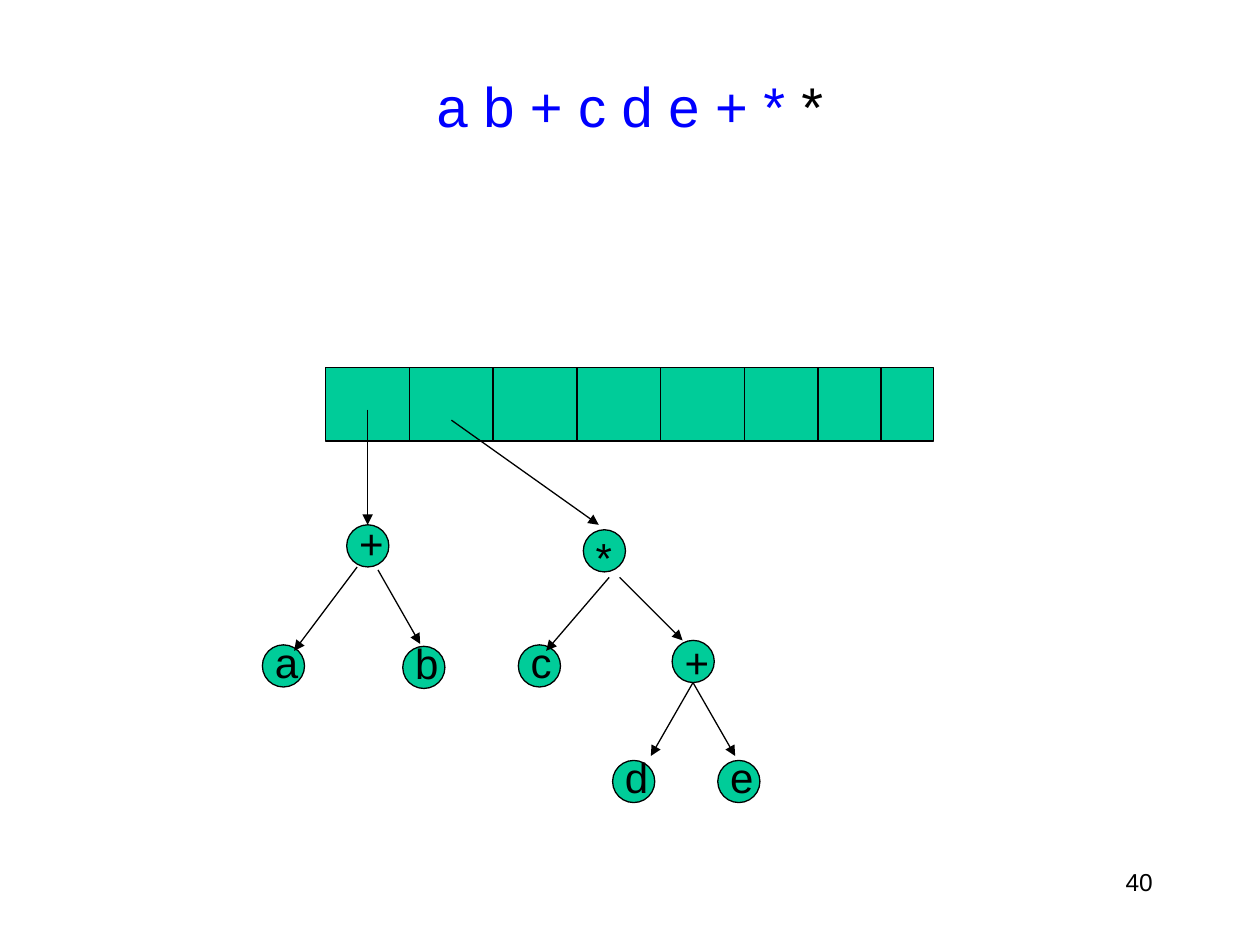
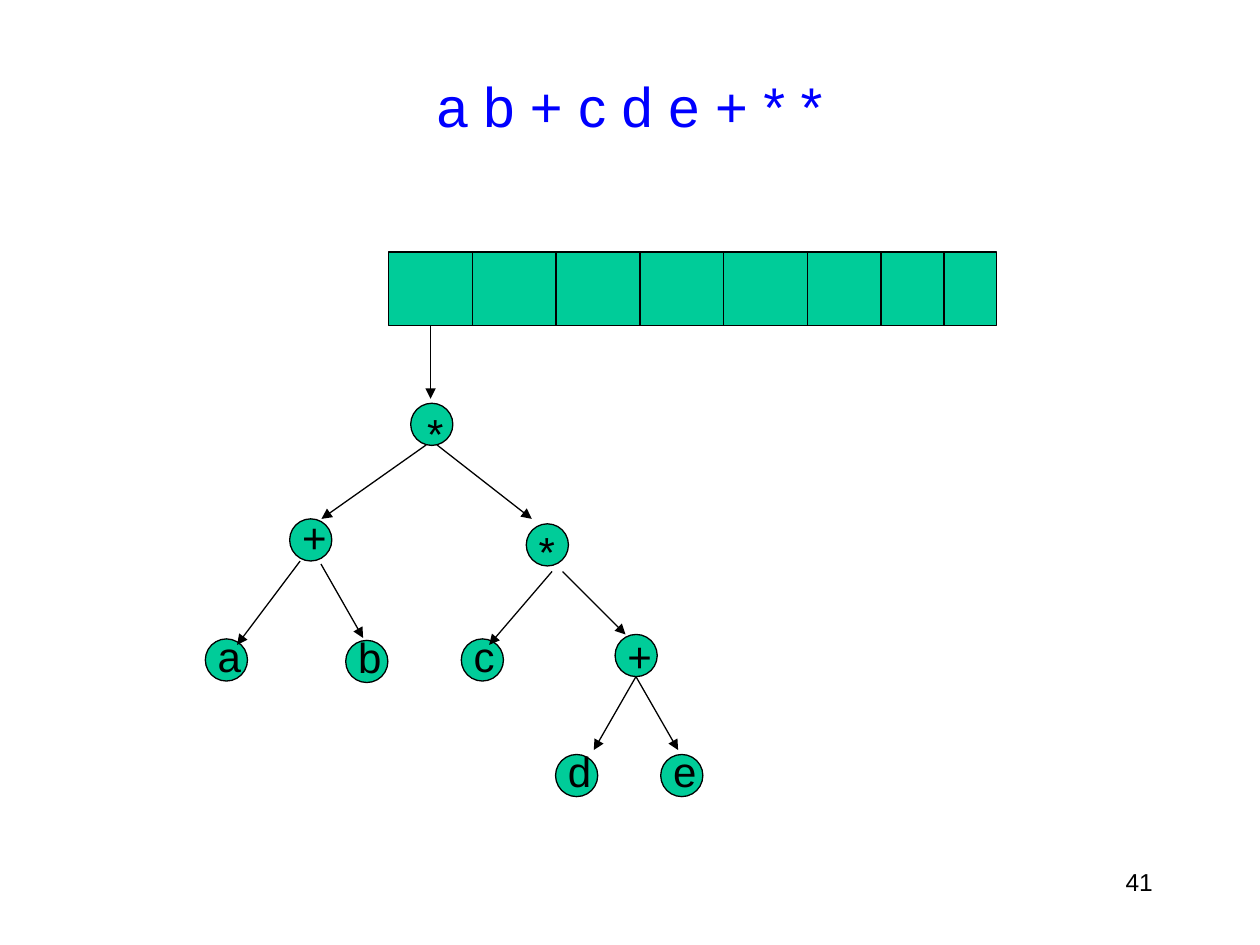
import itertools
from dataclasses import dataclass

import pptx
import pptx.dml.color
import pptx.enum.shapes
import pptx.enum.text
import pptx.oxml
import pptx.util
from lxml import etree

Cm, Pt = pptx.util.Cm, pptx.util.Pt
ALIGN = pptx.enum.text.PP_ALIGN
ANCHOR = pptx.enum.text.MSO_ANCHOR
SHAPE = pptx.enum.shapes.MSO_SHAPE


@dataclass(frozen=True)
class Theme:
    font: str = "Arial"
    ink: str = "000000"
    read_token: str = "0000FF"
    fill: str = "00CC99"
    title_size: int = 32
    label_size: int = 24
    number_size: int = 14
    line_width: float = 0.75


THEME = Theme()

# All lengths are centimetres.
STACK_CELLS = [1.69] * 5 + [1.48, 1.27, 1.06]
STACK_HEIGHT = 1.48
NODE_SIZE = 0.85
LABEL_BOX = (1.02, 1.27)

# Nodes: label, left, top, label shift right, label shift down
SUBTREE_NODES = [
    ("+", 6.99, 10.58, 0, -0.28),
    ("a", 5.29, 13.0, 0, -0.3),
    ("b", 8.12, 13.03, 0, -0.3),
    ("*", 11.76, 10.68, 0, -0.09),
    ("c", 10.45, 13.0, 0, -0.3),
    ("+", 13.55, 12.91, 0, -0.21),
    ("d", 12.35, 15.33, 0, -0.3),
    ("e", 14.47, 15.33, 0, -0.3),
]
# Arrows: start x, start y, end x, end y
SUBTREE_ARROWS = [
    (7.2, 11.43, 5.93, 13.12),
    (7.62, 11.49, 8.47, 12.98),
    (12.28, 11.64, 11.01, 13.12),
    (12.49, 11.64, 13.76, 12.91),
    (13.97, 13.76, 13.12, 15.24),
    (13.97, 13.76, 14.82, 15.24),
]

SLIDES = [
    {
        "number": "40",
        "title": [("a b + c d e + *", THEME.read_token), (" *", THEME.ink)],
        "stack": (6.56, 7.41),
        "subtree_shift": (0, 0),
        "root_nodes": [],
        "arrows": [(7.41, 8.26, 7.41, 10.58), (9.1, 8.47, 12.07, 10.58)],
    },
    {
        "number": "41",
        "title": [("a b + c d e + * *", THEME.read_token)],
        "stack": (7.83, 5.08),
        "subtree_shift": (-1.15, -0.12),
        "root_nodes": [("*", 8.28, 8.13, 0.08, -0.03)],
        "arrows": [
            (8.68, 6.56, 8.68, 8.04),
            (8.59, 8.97, 6.48, 10.46),
            (8.81, 8.97, 10.72, 10.46),
        ],
    },
]


def rgb(colour):
    return pptx.dml.color.RGBColor.from_string(colour)


def add_text(slide, runs, box, *, size, align=ALIGN.LEFT, anchor=ANCHOR.TOP):
    """Add a text box; runs is a list of (text, colour), box is left, top, width, height."""
    frame = slide.shapes.add_textbox(*map(Cm, box)).text_frame
    frame.word_wrap = True
    frame.vertical_anchor = anchor
    paragraph = frame.paragraphs[0]
    paragraph.alignment = align
    for text, colour in runs:
        run = paragraph.add_run()
        run.text = text
        run.font.name = THEME.font
        run.font.size = Pt(size)
        run.font.color.rgb = rgb(colour)


def style_line(line):
    line.color.rgb = rgb(THEME.ink)
    line.width = Pt(THEME.line_width)


def add_filled(slide, kind, box):
    shape = slide.shapes.add_shape(kind, *map(Cm, box))
    shape.shadow.inherit = False
    shape.fill.solid()
    shape.fill.fore_color.rgb = rgb(THEME.fill)
    style_line(shape.line)


def add_line(slide, ends, arrow=False):
    straight = pptx.enum.shapes.MSO_CONNECTOR.STRAIGHT
    connector = slide.shapes.add_connector(straight, *map(Cm, ends))
    style_line(connector.line)
    if arrow:
        outline = connector.line._get_or_add_ln()
        etree.SubElement(outline, pptx.oxml.ns.qn("a:tailEnd"), type="triangle")
    etree.SubElement(connector._element.spPr, pptx.oxml.ns.qn("a:effectLst"))


def add_stack(slide, left, top):
    add_filled(slide, SHAPE.RECTANGLE, (left, top, sum(STACK_CELLS), STACK_HEIGHT))
    for offset in itertools.accumulate(STACK_CELLS[:-1]):
        add_line(slide, (left + offset, top, left + offset, top + STACK_HEIGHT))


def add_tree(slide, nodes, arrows, shift=(0, 0)):
    right, down = shift
    for label, left, top, label_right, label_down in nodes:
        left, top = left + right, top + down
        add_filled(slide, SHAPE.OVAL, (left, top, NODE_SIZE, NODE_SIZE))
        label_box = (left + label_right, top + label_down, *LABEL_BOX)
        add_text(slide, [(label, THEME.ink)], label_box, size=THEME.label_size)
    for x1, y1, x2, y2 in arrows:
        add_line(slide, (x1 + right, y1 + down, x2 + right, y2 + down), arrow=True)


def add_step(presentation, step):
    slide = presentation.slides.add_slide(presentation.slide_layouts[6])
    add_text(slide, [(step["number"], THEME.ink)], (18.2, 17.36, 5.29, 1.27),
             size=THEME.number_size, align=ALIGN.RIGHT)
    add_text(slide, step["title"], (1.9, 1.06, 21.6, 2.12),
             size=THEME.title_size, align=ALIGN.CENTER, anchor=ANCHOR.MIDDLE)
    add_stack(slide, *step["stack"])
    add_tree(slide, SUBTREE_NODES, SUBTREE_ARROWS, step["subtree_shift"])
    add_tree(slide, step["root_nodes"], step["arrows"])


def main():
    presentation = pptx.Presentation()
    presentation.slide_width = Cm(25.4)
    presentation.slide_height = Cm(19.05)
    for step in SLIDES:
        add_step(presentation, step)
    presentation.save("out.pptx")


if __name__ == "__main__":
    main()
